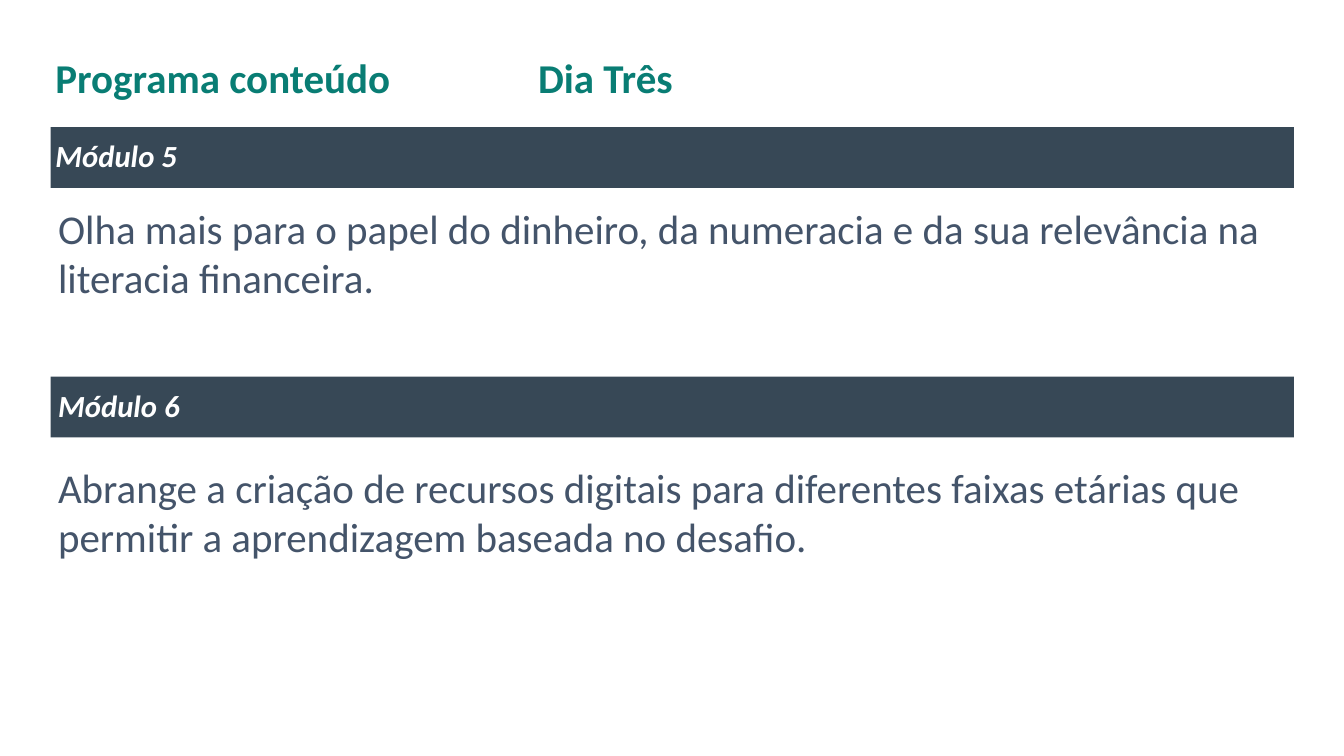
from dataclasses import dataclass

from lxml import etree
from pptx import Presentation
from pptx.dml.color import RGBColor
from pptx.enum.shapes import MSO_SHAPE
from pptx.enum.text import MSO_ANCHOR, MSO_AUTO_SIZE, PP_ALIGN
from pptx.oxml.ns import qn
from pptx.util import Pt

RECTANGLE = MSO_SHAPE.RECTANGLE
TOP, MIDDLE = MSO_ANCHOR.TOP, MSO_ANCHOR.MIDDLE
LEFT, JUSTIFY = PP_ALIGN.LEFT, PP_ALIGN.JUSTIFY
NO_AUTOFIT = MSO_AUTO_SIZE.NONE

COLORS = {"title": "097D74", "bar": "374856", "label": "FFFFFF", "text": "44546A"}
FONT = "Calibri"
INSET = 3.6
DAY_TAB = 377.2


@dataclass(frozen=True)
class Box:
    left: float
    top: float
    width: float
    height: float

    def lengths(self) -> tuple:
        return Pt(self.left), Pt(self.top), Pt(self.width), Pt(self.height)


@dataclass(frozen=True)
class Style:
    size: float
    color: str
    bold: bool = False
    italic: bool = False
    align: PP_ALIGN = LEFT
    anchor: MSO_ANCHOR = TOP
    spacing: float = 1.0


@dataclass(frozen=True)
class Description:
    box: Box
    text: str


TITLE = Style(32, "title", bold=True, anchor=MIDDLE, spacing=0.9)
LABEL = Style(24, "label", bold=True, italic=True, align=JUSTIFY, anchor=MIDDLE, spacing=0.9)
BODY = Style(32, "text")

DESCRIPTIONS = [
    Description(
        Box(41.76, 155.52, 966.96, 123.12),
        "Olha mais para o papel do dinheiro, da numeracia e da sua relevância na "
        "literacia financeira.",
    ),
    Description(
        Box(41.76, 357.84, 966.96, 123.84),
        "Abrange a criação de recursos digitais para diferentes faixas etárias que "
        "permitir a aprendizagem baseada no desafio.",
    ),
]


def place(sp, box: Box) -> None:
    sp.left, sp.top, sp.width, sp.height = box.lengths()


def paint_bar(sp) -> None:
    sp.fill.solid()
    sp.fill.fore_color.rgb = RGBColor.from_string(COLORS["bar"])
    sp.line.fill.background()


def write(sp, text: str, style: Style):
    tf = sp.text_frame
    tf.word_wrap = True
    tf.auto_size = NO_AUTOFIT
    tf.vertical_anchor = style.anchor
    tf.margin_left = tf.margin_right = tf.margin_top = tf.margin_bottom = Pt(INSET)
    p = tf.paragraphs[0]
    p.alignment = style.align
    p.line_spacing = style.spacing
    p.space_before = Pt(0)
    r = p.add_run()
    r.text = text
    r.font.name = FONT
    r.font.size = Pt(style.size)
    r.font.bold = style.bold
    r.font.italic = style.italic
    r.font.color.rgb = RGBColor.from_string(COLORS[style.color])
    return p


def add_tab(p, position: float) -> None:
    tabs = etree.SubElement(p._p.get_or_add_pPr(), qn("a:tabLst"))
    etree.SubElement(tabs, qn("a:tab"), pos=str(Pt(position)), algn="l")


def remove_bullet(p) -> None:
    pPr = p._p.get_or_add_pPr()
    pPr.set("marL", "0")
    pPr.set("indent", "0")
    etree.SubElement(pPr, qn("a:buNone"))


def main() -> None:
    prs = Presentation()
    prs.slide_width, prs.slide_height = Pt(1050), Pt(591)
    s = prs.slides.add_slide(prs.slide_layouts[1])

    title = s.shapes.title
    place(title, Box(39.6, 34.2, 970.56, 56.88))
    add_tab(write(title, "Programa conteúdo\tDia Três", TITLE), DAY_TAB)

    module_5 = s.placeholders[1]
    place(module_5, Box(39.6, 99.36, 971.28, 47.52))
    paint_bar(module_5)
    remove_bullet(write(module_5, "Módulo 5", LABEL))

    module_6 = s.shapes.add_group_shape()
    bar = module_6.shapes.add_shape(RECTANGLE, *Box(39.6, 294.48, 971.28, 47.52).lengths())
    bar.shadow.inherit = False
    paint_bar(bar)
    label = module_6.shapes.add_textbox(*Box(41.76, 301.68, 966.96, 33.12).lengths())
    write(label, "Módulo 6", LABEL)

    for description in DESCRIPTIONS:
        sp = s.shapes.add_textbox(*description.box.lengths())
        write(sp, description.text, BODY)

    prs.save("out.pptx")


if __name__ == "__main__":
    main()
